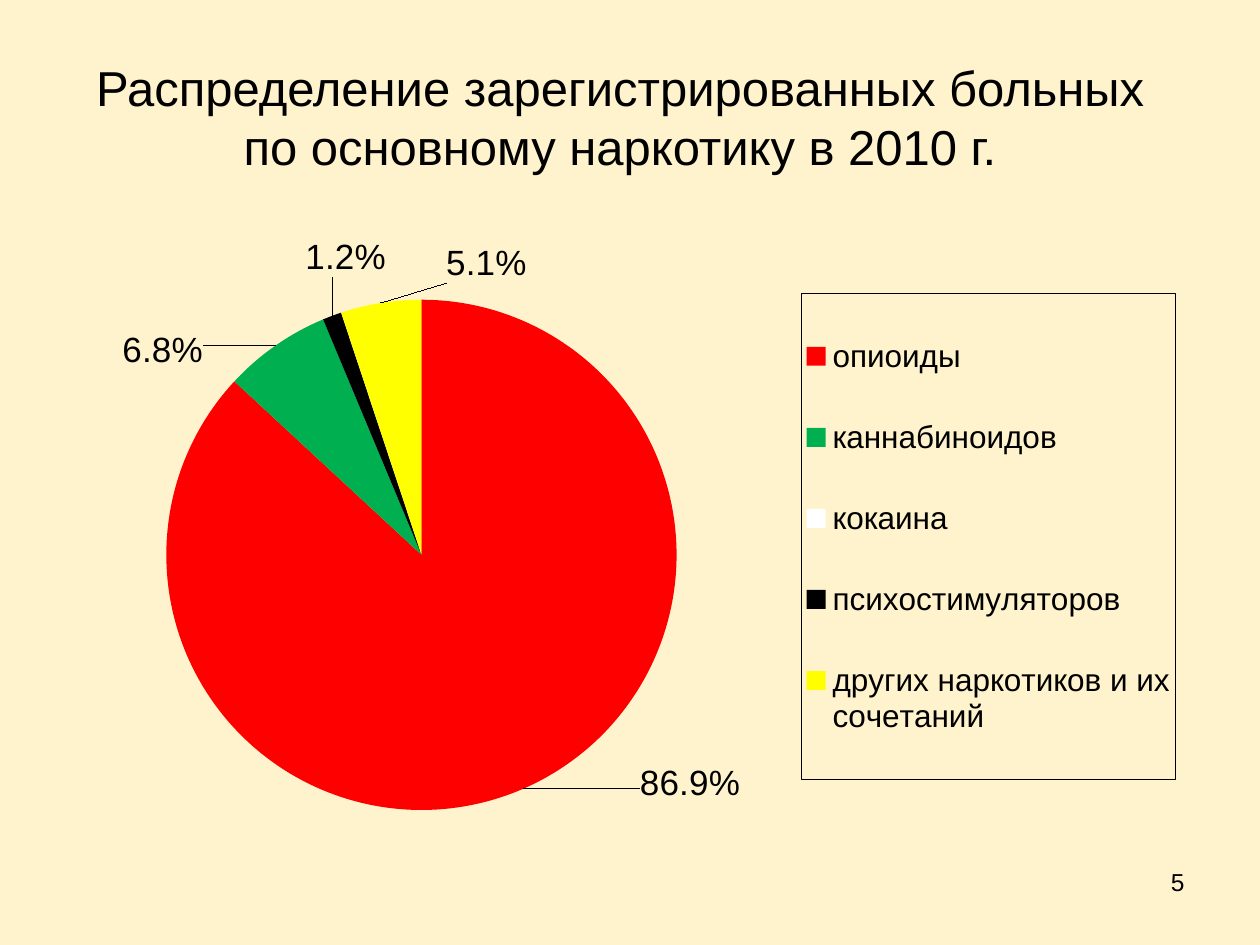
from dataclasses import dataclass

from lxml import etree
from pptx import Presentation
from pptx.chart.data import CategoryChartData
from pptx.dml.color import RGBColor
from pptx.enum.chart import XL_CHART_TYPE, XL_LABEL_POSITION, XL_LEGEND_POSITION
from pptx.enum.text import MSO_ANCHOR, PP_ALIGN
from pptx.oxml.ns import qn
from pptx.util import Inches, Pt

PIE = XL_CHART_TYPE.PIE
OUTSIDE_END = XL_LABEL_POSITION.OUTSIDE_END
LEGEND_RIGHT = XL_LEGEND_POSITION.RIGHT
MIDDLE = MSO_ANCHOR.MIDDLE
CENTER, RIGHT = PP_ALIGN.CENTER, PP_ALIGN.RIGHT

CREAM = RGBColor(0xFF, 0xF3, 0xCD)
BLACK = RGBColor(0x00, 0x00, 0x00)
RED = RGBColor(0xFF, 0x00, 0x00)
GREEN = RGBColor(0x00, 0xB0, 0x50)
WHITE = RGBColor(0xFF, 0xFF, 0xFF)
YELLOW = RGBColor(0xFF, 0xFF, 0x00)

FONT = "Arial"
PERCENT_FORMAT = "0.0%"


@dataclass
class Slice:
    name: str
    value: float
    color: RGBColor
    label_x: float  # label shift as a fraction of the chart
    label_y: float


SLICES = [
    Slice("опиоиды", 86.9, RED, 0.1, -0.05),
    Slice("каннабиноидов", 6.8, GREEN, -0.06, 0.05),
    Slice("кокаина", 0, WHITE, -0.04, -0.03),
    Slice("психостимуляторов", 1.2, BLACK, 0.05, -0.05),
    Slice("других наркотиков и их сочетаний", 5.1, YELLOW, 0.13, -0.02),
]


def format_font(font, size: float) -> None:
    for name, value in {"name": FONT, "size": Pt(size), "bold": False}.items():
        setattr(font, name, value)
    font.color.rgb = BLACK


def write_text(shape, text: str, size: float, alignment) -> None:
    shape.text_frame.word_wrap = True
    paragraph = shape.text_frame.paragraphs[0]
    paragraph.alignment = alignment
    run = paragraph.add_run()
    run.text = text
    format_font(run.font, size)


def make_layout(values: dict):
    """Return a manual chart layout element holding the given settings."""
    layout = etree.Element(qn("c:layout"))
    manual = etree.SubElement(layout, qn("c:manualLayout"))
    for name, value in values.items():
        etree.SubElement(manual, qn(f"c:{name}"), val=str(value))
    return layout


def make_area_layout(x: float, y: float, width: float, height: float, **target):
    return make_layout({**target, "xMode": "edge", "yMode": "edge",
                        "x": x, "y": y, "w": width, "h": height})


def replace_layout(parent, layout, after: str | None) -> None:
    for old in parent.findall(qn("c:layout")):
        parent.remove(old)
    if after is None:
        parent.insert(0, layout)
    else:
        parent.find(qn(after)).addnext(layout)


def format_slice(point, item: Slice) -> None:
    point.format.fill.solid()
    point.format.fill.fore_color.rgb = item.color
    point.format.line.fill.background()
    label = point.data_label
    format_font(label.font, 20)
    label.position = OUTSIDE_END


def place_label(element, item: Slice) -> None:
    layout = make_layout({"x": item.label_x, "y": item.label_y})
    replace_layout(element, layout, "c:idx")
    number_format = etree.Element(
        qn("c:numFmt"), formatCode=PERCENT_FORMAT, sourceLinked="0")
    layout.addnext(number_format)
    element.find(qn("c:showVal")).set("val", "0")
    element.find(qn("c:showPercent")).set("val", "1")


def add_pie(slide) -> None:
    data = CategoryChartData()
    data.categories = [item.name for item in SLICES]
    data.add_series("Series 1", [item.value for item in SLICES])
    chart = slide.shapes.add_chart(
        PIE, Inches(0.42), Inches(1.88), Inches(9), Inches(4.95), data).chart
    chart.has_title = False
    format_font(chart.font, 18)

    chart.has_legend = True
    legend = chart.legend
    legend.position = LEGEND_RIGHT
    legend.include_in_layout = False
    format_font(legend.font, 18)
    legend_element = legend._element
    replace_layout(legend_element, make_area_layout(0.66, 0.09, 0.33, 0.78),
                   "c:legendPos")
    border = etree.Element(qn("c:spPr"))
    line = etree.SubElement(border, qn("a:ln"), w=str(Pt(0.5)))
    fill = etree.SubElement(line, qn("a:solidFill"))
    etree.SubElement(fill, qn("a:srgbClr"), val=str(BLACK))
    legend_element.find(qn("c:txPr")).addprevious(border)

    plot = chart.plots[0]
    plot.vary_by_categories = True
    series = plot.series[0]
    labels = series.data_labels
    settings = {"show_value": False, "show_percentage": True,
                "number_format": PERCENT_FORMAT,
                "number_format_is_linked": False, "position": OUTSIDE_END}
    for name, value in settings.items():
        setattr(labels, name, value)
    format_font(labels.font, 20)
    for index, item in enumerate(SLICES):
        format_slice(series.points[index], item)
    for element, item in zip(labels._element.findall(qn("c:dLbl")), SLICES):
        place_label(element, item)

    plot_area = chart._chartSpace.find(f".//{qn('c:plotArea')}")
    replace_layout(plot_area, make_area_layout(
        0.1, 0.1, 0.45, 0.82, layoutTarget="inner"), None)


def main() -> None:
    presentation = Presentation()
    presentation.slide_width, presentation.slide_height = Inches(10), Inches(7.5)
    slide = presentation.slides.add_slide(presentation.slide_layouts[5])
    slide.background.fill.solid()
    slide.background.fill.fore_color.rgb = CREAM

    title = slide.shapes.title
    bounds = {"left": 0.42, "top": 0.3, "width": 9, "height": 1.25}
    for name, value in bounds.items():
        setattr(title, name, Inches(value))
    title.text_frame.vertical_anchor = MIDDLE
    write_text(title, "Распределение зарегистрированных больных "
               "по основному наркотику в 2010 г.", 28, CENTER)

    add_pie(slide)

    page_number = slide.shapes.add_textbox(
        Inches(7.17), Inches(6.83), Inches(2.33), Inches(0.52))
    write_text(page_number, "5", 14, RIGHT)
    presentation.save("out.pptx")


if __name__ == "__main__":
    main()
